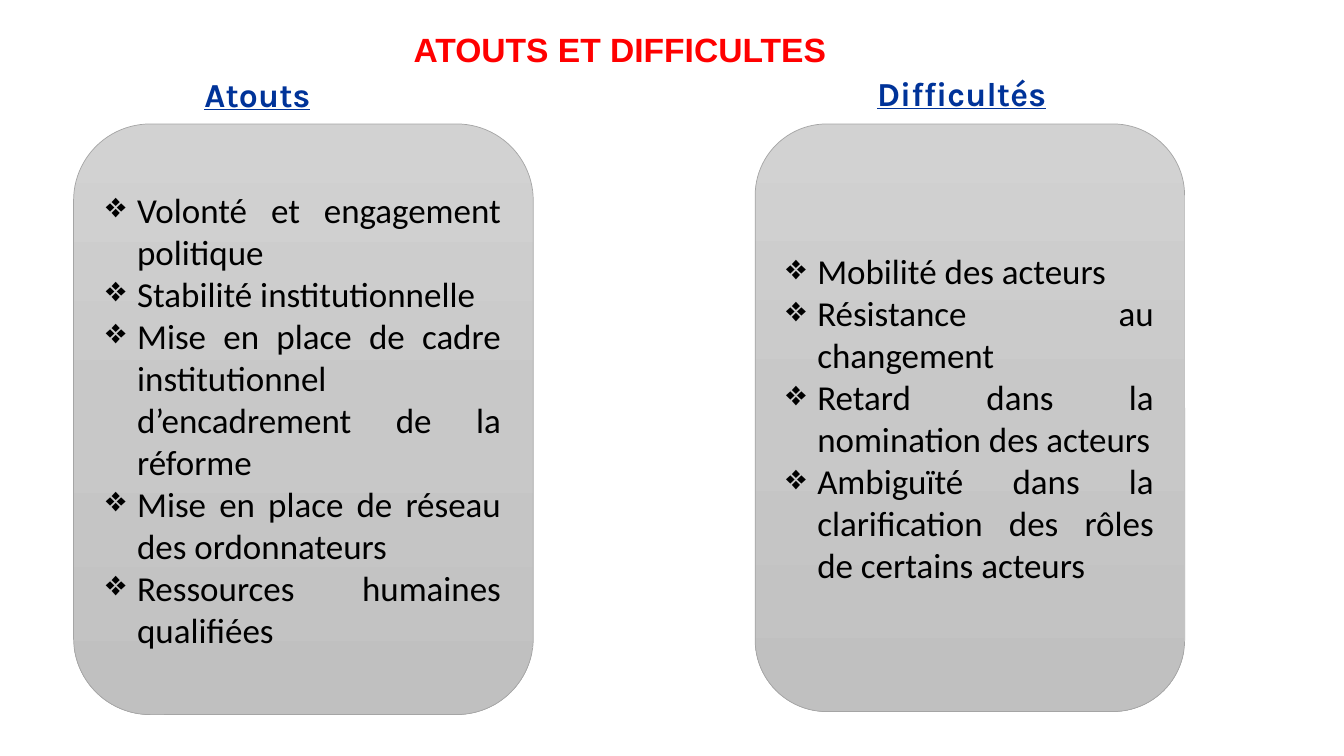
from dataclasses import dataclass

from lxml.etree import SubElement
from pptx import Presentation
from pptx.dml.color import RGBColor
from pptx.enum.shapes import MSO_SHAPE as Preset
from pptx.enum.text import MSO_ANCHOR as Anchor, MSO_AUTO_SIZE as AutoSize, PP_ALIGN as Align
from pptx.oxml.ns import qn
from pptx.shapes.autoshape import Shape
from pptx.slide import Slide
from pptx.text.text import _Paragraph as Paragraph, _Run as Run
from pptx.util import Emu, Pt

EMU_PER_PX = 9144  # 100 px to the inch


@dataclass(frozen=True)
class Theme:
    title_color: str = "FF0000"
    heading_color: str = "003399"
    body_color: str = "000000"
    border_color: str = "A5A5A5"
    gradient: tuple[tuple[int, str], ...] = ((0, "D2D2D2"), (50, "C8C8C8"), (100, "C0C0C0"))
    title_font: str = "Arial"
    heading_font: str = "Karla"
    body_font: str = "Calibri"
    title_size: int = 24
    heading_size: int = 24
    body_size: int = 25
    border_width: float = 0.5
    bullet: str = "❖"
    bullet_indent: int = 31


@dataclass(frozen=True)
class Box:
    left: int
    top: int
    width: int
    height: int

    def emu(self) -> tuple[Emu, Emu, Emu, Emu]:
        return px(self.left), px(self.top), px(self.width), px(self.height)


@dataclass(frozen=True)
class Column:
    heading: str
    heading_box: Box
    panel_box: Box
    points: tuple[str, ...]


THEME = Theme()
TITLE_BOX = Box(260, 17, 719, 69)
COLUMNS = (
    Column("Atouts", Box(193, 68, 170, 50), Box(73, 123, 456, 586), (
        "Volonté et engagement politique",
        "Stabilité institutionnelle",
        "Mise en place de cadre institutionnel d’encadrement de la réforme",
        "Mise en place de réseau des ordonnateurs",
        "Ressources humaines qualifiées",
    )),
    Column("Difficultés", Box(860, 67, 238, 50), Box(749, 123, 426, 583), (
        "Mobilité des acteurs",
        "Résistance au changement",
        "Retard dans la nomination des acteurs",
        "Ambiguïté dans la clarification des rôles de certains acteurs",
    )),
)


def px(length: int) -> Emu:
    return Emu(length * EMU_PER_PX)


def add_run(paragraph: Paragraph, text: str, font: str, size: int, color: str,
            bold: bool = False) -> Run:
    run = paragraph.add_run()
    run.text = text
    run.font.name = font
    run.font.size = Pt(size)
    run.font.bold = bold
    run.font.color.rgb = RGBColor.from_string(color)
    return run


def add_title(slide: Slide, text: str) -> None:
    title = slide.shapes.title
    title.left, title.top, title.width, title.height = TITLE_BOX.emu()
    frame = title.text_frame
    frame.auto_size = AutoSize.NONE
    frame.vertical_anchor = Anchor.MIDDLE
    line = frame.paragraphs[0]
    line.alignment = Align.CENTER
    line.line_spacing = 0.9
    add_run(line, text, THEME.title_font, THEME.title_size, THEME.title_color, bold=True)


def add_heading(slide: Slide, column: Column) -> None:
    frame = slide.shapes.add_textbox(*column.heading_box.emu()).text_frame
    frame.word_wrap = True
    frame.auto_size = AutoSize.SHAPE_TO_FIT_TEXT
    line = frame.paragraphs[0]
    line.alignment = Align.JUSTIFY
    run = add_run(line, column.heading, THEME.heading_font, THEME.heading_size,
                  THEME.heading_color, bold=True)
    run.font.underline = True
    run.font._element.set("spc", "10")


def fill_gradient(panel: Shape) -> None:
    panel.fill.gradient()
    panel.fill.gradient_angle = 270
    stops = panel._element.spPr.find(qn("a:gradFill")).find(qn("a:gsLst"))
    for stop in list(stops):
        stops.remove(stop)
    for percent, color in THEME.gradient:
        stop = SubElement(stops, qn("a:gs"), pos=str(percent * 1000))
        SubElement(stop, qn("a:srgbClr"), val=color)


def add_bullet(paragraph: Paragraph) -> None:
    properties = paragraph._p.get_or_add_pPr()
    indent = px(THEME.bullet_indent)
    properties.set("marL", str(indent))
    properties.set("indent", str(-indent))
    SubElement(properties, qn("a:buChar"), char=THEME.bullet)


def add_panel(slide: Slide, column: Column) -> None:
    panel = slide.shapes.add_shape(Preset.ROUNDED_RECTANGLE, *column.panel_box.emu())
    panel.shadow.inherit = False
    fill_gradient(panel)
    panel.line.color.rgb = RGBColor.from_string(THEME.border_color)
    panel.line.width = Pt(THEME.border_width)
    frame = panel.text_frame
    frame.word_wrap = True
    frame.vertical_anchor = Anchor.MIDDLE
    for index, point in enumerate(column.points):
        item = frame.add_paragraph() if index else frame.paragraphs[0]
        item.alignment = Align.JUSTIFY
        add_bullet(item)
        add_run(item, point, THEME.body_font, THEME.body_size, THEME.body_color)


def main() -> None:
    presentation = Presentation()
    presentation.slide_width, presentation.slide_height = px(1333), px(750)
    slide = presentation.slides.add_slide(presentation.slide_layouts.get_by_name("Title Only"))

    # Title
    add_title(slide, "ATOUTS ET DIFFICULTES ")

    # Strengths and difficulties, side by side
    for column in COLUMNS:
        add_panel(slide, column)
        add_heading(slide, column)

    presentation.save("out.pptx")


if __name__ == "__main__":
    main()
